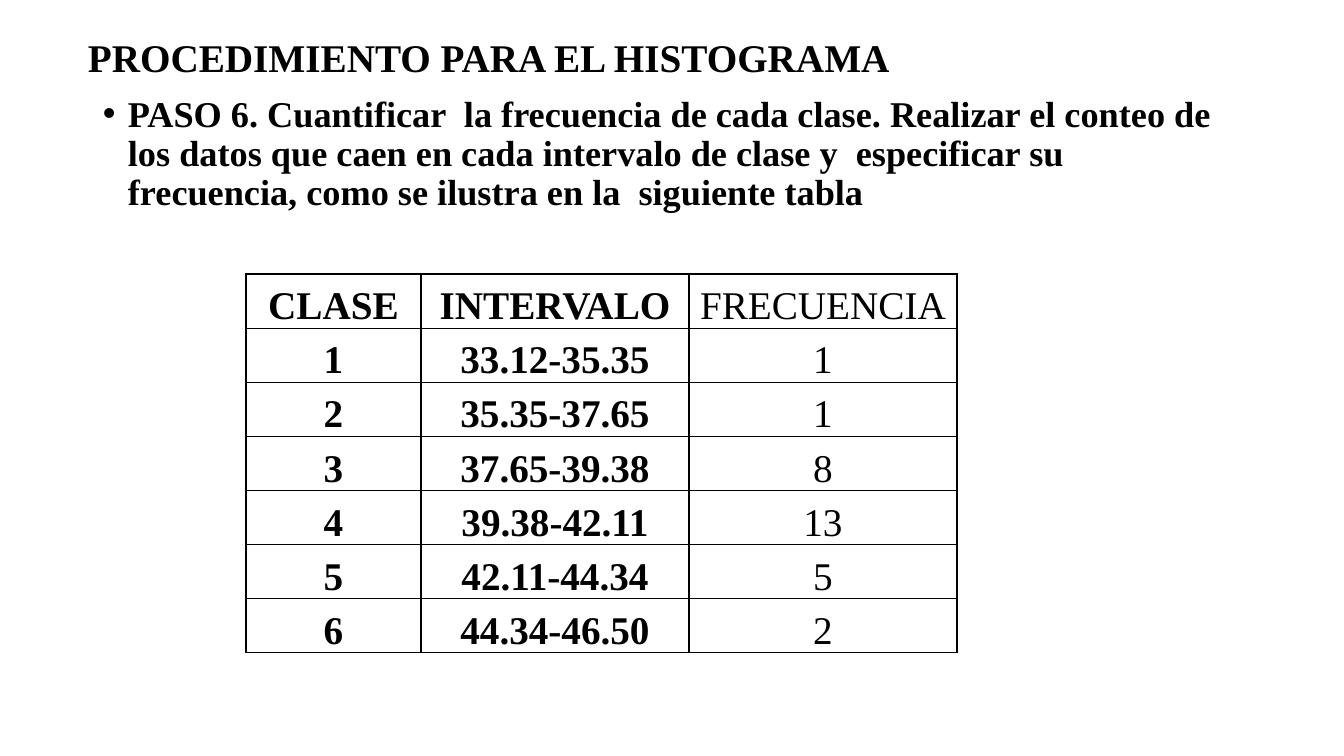
"""Build the slide on step 6 of the histogram procedure with its frequency table."""
from lxml.etree import SubElement
from pptx import Presentation
from pptx.dml.color import RGBColor
from pptx.enum.text import MSO_ANCHOR as Anchor, PP_ALIGN as Align
from pptx.oxml.ns import qn
from pptx.util import Emu, Pt

TITLE = "PROCEDIMIENTO PARA EL HISTOGRAMA"
STEP = ("PASO 6. Cuantificar  la frecuencia de cada clase. Realizar el conteo de los datos "
        "que caen en cada intervalo de clase y  especificar su frecuencia, como se ilustra "
        "en la  siguiente tabla")
FREQUENCIES = [
    ("CLASE", "INTERVALO", "FRECUENCIA"),
    ("1", "33.12-35.35", "1"),
    ("2", "35.35-37.65", "1"),
    ("3", "37.65-39.38", "8"),
    ("4", "39.38-42.11", "13"),
    ("5", "42.11-44.34", "5"),
    ("6", "44.34-46.50", "2"),
]
COLUMN_WIDTHS = (175, 268, 268)
ROW_HEIGHT = 50
TABLE_LEFT, TABLE_TOP = 246, 274
FONT, BLACK, WHITE = "Times New Roman", "000000", "FFFFFF"


def px(length):
    return Emu(round(length * 914400 / 100.8))


def color(value):
    return RGBColor.from_string(value)


def write(paragraph, words, size, bold=True):
    paragraph.text = words
    font = paragraph.font
    font.name, font.size, font.bold = FONT, Pt(size), bold
    font.color.rgb = color(BLACK)


def add_text(slide, box, words, size, anchor):
    frame = slide.shapes.add_textbox(*map(px, box)).text_frame
    frame.word_wrap = True
    frame.vertical_anchor = anchor
    paragraph = frame.paragraphs[0]
    write(paragraph, words, size)
    paragraph.line_spacing = 0.9
    return paragraph


def add_bullet(paragraph, indent):
    properties = paragraph._p.get_or_add_pPr()
    properties.set("marL", str(px(indent)))
    properties.set("indent", str(-px(indent)))
    SubElement(properties, qn("a:buFont"), typeface="Arial")
    SubElement(properties, qn("a:buChar"), char="•")


def add_borders(cell):
    properties = cell._tc.get_or_add_tcPr()
    for place, side in enumerate(("a:lnL", "a:lnR", "a:lnT", "a:lnB")):
        border = SubElement(properties, qn(side), w=str(Pt(1)))
        fill = SubElement(border, qn("a:solidFill"))
        SubElement(fill, qn("a:srgbClr"), val=BLACK)
        properties.insert(place, border)


def fill_cell(cell, words, bold):
    cell.fill.background()
    cell.vertical_anchor = Anchor.BOTTOM
    cell.margin_left = cell.margin_right = px(5)
    cell.margin_top = cell.margin_bottom = 0
    paragraph = cell.text_frame.paragraphs[0]
    write(paragraph, words, 28, bold)
    paragraph.alignment = Align.CENTER
    paragraph.line_spacing = 1.15
    paragraph.space_after = Pt(10)
    add_borders(cell)


def add_frequencies(slide):
    size = sum(COLUMN_WIDTHS), ROW_HEIGHT * len(FREQUENCIES)
    table = slide.shapes.add_table(len(FREQUENCIES), len(COLUMN_WIDTHS),
                                   *map(px, (TABLE_LEFT, TABLE_TOP, *size))).table
    table.first_row = table.horz_banding = False
    for column, width in zip(table.columns, COLUMN_WIDTHS):
        column.width = px(width)
    for r, entries in enumerate(FREQUENCIES):
        table.rows[r].height = px(ROW_HEIGHT)
        for c, words in enumerate(entries):
            fill_cell(table.cell(r, c), words, bold=c < 2)


def main():
    deck = Presentation()
    deck.slide_width, deck.slide_height = px(1344), px(756)
    slide = deck.slides.add_slide(deck.slide_layouts[6])
    slide.background.fill.solid()
    slide.background.fill.fore_color.rgb = color(WHITE)
    add_text(slide, (78, 28, 1159, 64), TITLE, 28, Anchor.MIDDLE)
    step = add_text(slide, (93, 91, 1159, 141), STEP, 25.9, Anchor.TOP)
    step.space_before, step.space_after = Pt(10), Pt(6)
    add_bullet(step, 25)
    add_frequencies(slide)
    deck.save("out.pptx")


if __name__ == "__main__":
    main()
